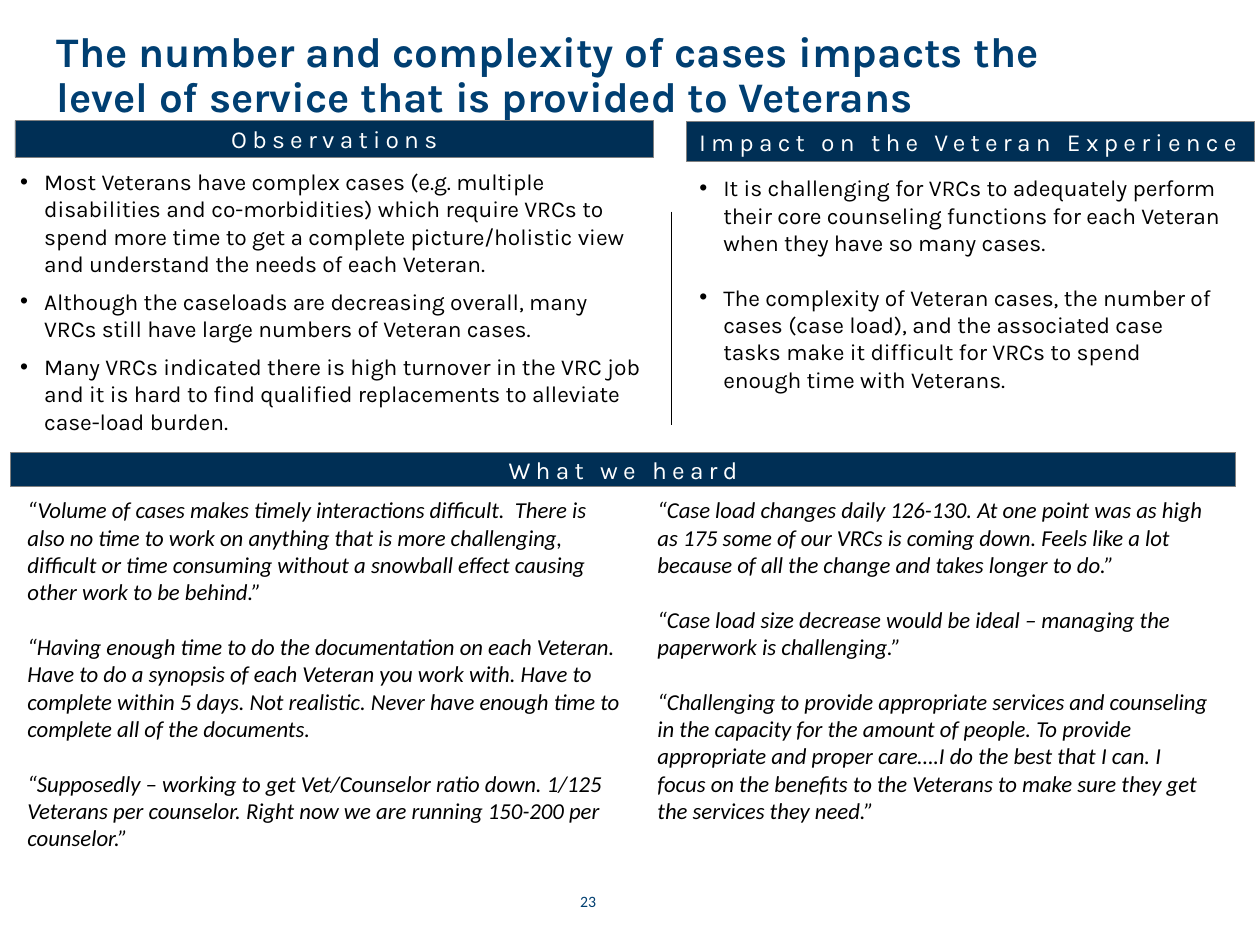
from lxml.etree import SubElement
from pptx import Presentation
from pptx.dml.color import RGBColor
from pptx.enum.shapes import MSO_CONNECTOR as Link, MSO_SHAPE as Shape
from pptx.enum.text import MSO_ANCHOR as Anchor, MSO_AUTO_SIZE as Fit, PP_ALIGN as Align
from pptx.oxml.ns import qn
from pptx.util import Pt

TITLE = ("The number and complexity of cases impacts the\v"
         "level of service that is provided to Veterans")
PAGE = "23"

# text, box (left, top, width, height), alignment
BARS = [
    ("Observations", (8.6, 69, 365, 21), Align.CENTER),
    ("Impact on the Veteran Experience", (392.4, 69.4, 324.7, 22.8), Align.LEFT),
    ("What we heard", (5.8, 258.5, 700.5, 19.5), Align.CENTER),
]

# box, space after each paragraph, paragraphs
LISTS = [
    ((4.3, 92.2, 370.8, 161.3), 6, [
        "Most Veterans have complex cases (e.g. multiple disabilities and "
        "co-morbidities) which require VRCs to spend more time to get a complete "
        "picture/holistic view and understand the needs of each Veteran.",
        "Although the caseloads are decreasing overall, many VRCs still have "
        "large numbers of Veteran cases.",
        "Many VRCs indicated there is high turnover in the VRC job and it is hard "
        "to find qualified replacements to alleviate case-load burden.",
    ]),
    ((392.4, 95.8, 313.9, 147.6), 15.6, [
        "It is challenging for VRCs to adequately perform their core counseling "
        "functions for each Veteran when they have so many cases.",
        "The complexity of Veteran cases, the number of cases (case load), and the "
        "associated case tasks make it difficult for VRCs to spend enough time "
        "with Veterans.",
    ]),
]

QUOTES = [
    ((8.6, 280, 354.2, 231), 15.6, [
        "“Volume of cases makes timely interactions difficult.  There is also no "
        "time to work on anything that is more challenging, difficult or time "
        "consuming without a snowball effect causing other work to be behind.”",
        "“Having enough time to do the documentation on each Veteran. Have to do a "
        "synopsis of each Veteran you work with. Have to complete within 5 days. "
        "Not realistic. Never have enough time to complete all of the documents.",
        "“Supposedly – working to get Vet/Counselor ratio down. 1/125 Veterans per "
        "counselor. Right now we are running 150-200 per counselor.”",
    ]),
    ((368.6, 280, 330.5, 216), 15.6, [
        "“Case load changes daily 126-130. At one point was as high as 175 some of "
        "our VRCs is coming down. Feels like a lot because of all the change and "
        "takes longer to do.”",
        "“Case load size decrease would be ideal – managing the paperwork is "
        "challenging.”",
        "“Challenging to provide appropriate services and counseling in the "
        "capacity for the amount of people. To provide appropriate and proper "
        "care….I do the best that I can. I focus on the benefits to the Veterans "
        "to make sure they get the services they need.”",
    ]),
]

COLORS = {"title": "003F72", "page": "003F71", "bar": "002F55",
          "edge": "808080", "text": "000000", "light": "FFFFFF"}
HEAD, BODY = "Karla", "Calibri"
INDENT = 13.7


def color(name):
    return RGBColor.from_string(COLORS[name])


def place(shape, box):
    shape.left, shape.top, shape.width, shape.height = map(Pt, box)


def style(para, face, size, tint, bold=False, italic=False):
    for run in para.runs:
        font = run.font
        font.name, font.size = face, Pt(size)
        font.bold, font.italic = bold, italic
        font.color.rgb = color(tint)


def bullet(para):
    props = para._p.get_or_add_pPr()
    props.set("marL", str(Pt(INDENT)))
    props.set("indent", str(-Pt(INDENT)))
    SubElement(props, qn("a:buFont"), typeface="Arial")
    SubElement(props, qn("a:buChar"), char="•")


def fill(shape, gap, texts, face, listed):
    """Write the texts as paragraphs: a bulleted list or italic quotes."""
    frame = shape.text_frame
    frame.word_wrap, frame.auto_size = True, Fit.NONE
    frame.vertical_anchor = Anchor.TOP
    frame.text = "\n".join(texts)
    for para in frame.paragraphs:
        if listed:
            bullet(para)
        para.space_before, para.space_after = Pt(0), Pt(gap)
        style(para, face, 13, "text", italic=not listed)


def add_bar(shapes, text, box, align):
    bar = shapes.add_shape(Shape.RECTANGLE, *map(Pt, box))
    bar.shadow.inherit = False
    bar.fill.solid()
    bar.fill.fore_color.rgb = color("bar")
    bar.line.color.rgb = color("edge")
    bar.line.width = Pt(0.5)
    frame = bar.text_frame
    frame.text, frame.vertical_anchor = text, Anchor.MIDDLE
    if align == Align.LEFT:
        frame.margin_right = 0
    para = frame.paragraphs[0]
    para.alignment = align
    style(para, HEAD, 14, "light")
    para.runs[0]._r.get_or_add_rPr().set("spc", "300")


def main():
    deck = Presentation()
    deck.slide_width, deck.slide_height = Pt(720), Pt(540)
    slide = deck.slides.add_slide(deck.slide_layouts.get_by_name("Two Content"))
    shapes = slide.shapes

    title = shapes.title
    place(title, (25.2, 13, 673.9, 61.2))
    frame = title.text_frame
    frame.text, frame.auto_size = TITLE, Fit.NONE
    frame.vertical_anchor = Anchor.MIDDLE
    para = frame.paragraphs[0]
    para.alignment, para.line_spacing = Align.LEFT, 0.9
    style(para, HEAD, 24, "title", bold=True)

    for bar in BARS:
        add_bar(shapes, *bar)

    for slot, (box, gap, texts) in zip((1, 2), LISTS):
        body = slide.placeholders[slot]
        place(body, box)
        fill(body, gap, texts, HEAD, listed=True)

    for box, gap, texts in QUOTES:
        fill(shapes.add_textbox(*map(Pt, box)), gap, texts, BODY, listed=False)

    rule = shapes.add_connector(Link.STRAIGHT, Pt(383.8), Pt(121), Pt(383.8), Pt(242.6))
    rule.line.color.rgb = color("text")
    rule.line.width = Pt(0.5)
    SubElement(rule._element.spPr, qn("a:effectLst"))

    page = shapes.add_textbox(*map(Pt, (316, 500.4, 40.3, 28.8))).text_frame
    page.text, page.word_wrap = PAGE, True
    page.vertical_anchor = Anchor.MIDDLE
    page.paragraphs[0].alignment = Align.CENTER
    style(page.paragraphs[0], BODY, 9, "page")

    deck.save("out.pptx")


if __name__ == "__main__":
    main()
